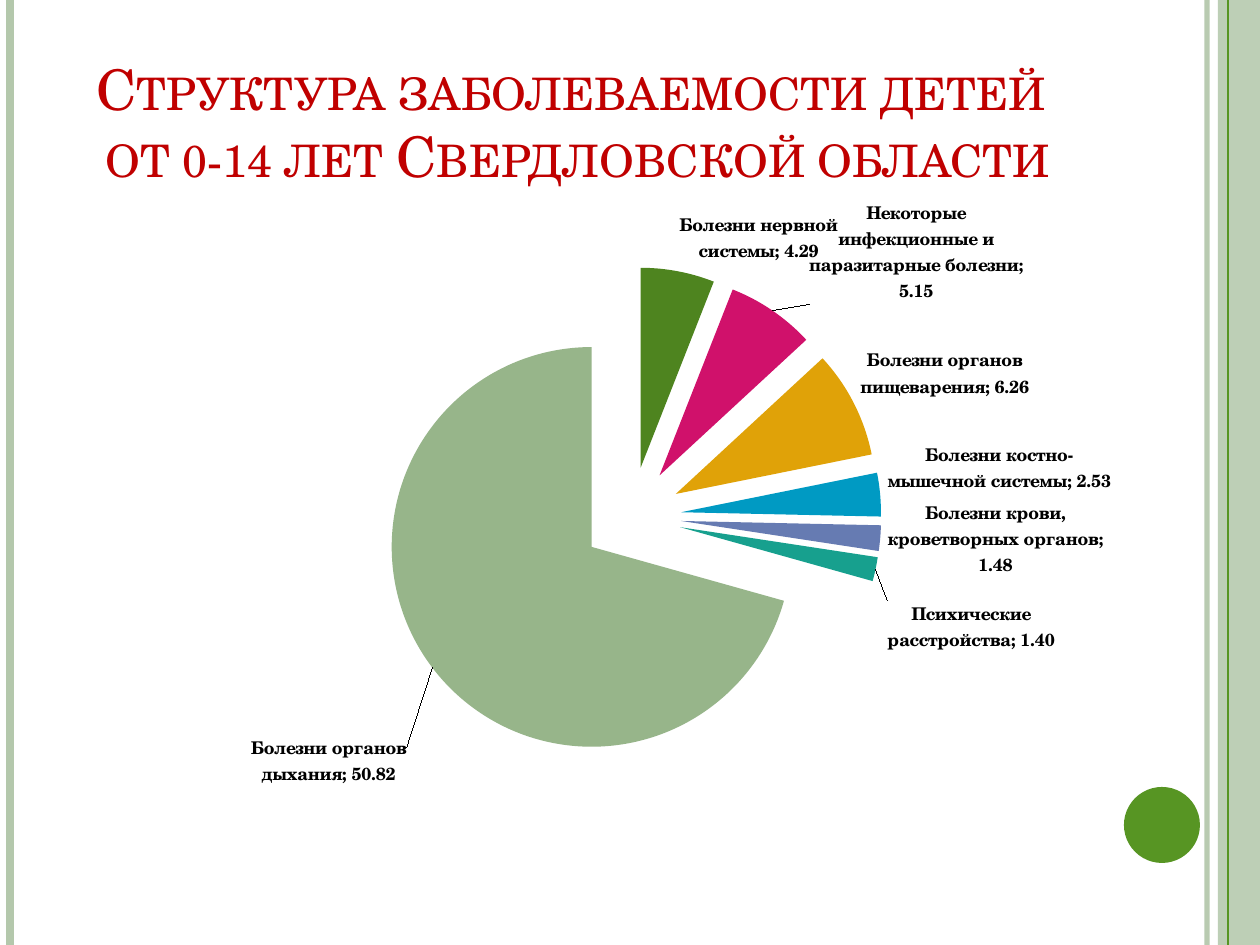
import pptx
import pptx.util
import pptx.chart.data
import pptx.dml.color
import pptx.enum.chart
import pptx.enum.shapes
import pptx.enum.text
import pptx.oxml
import pptx.oxml.ns

SCALE = 914400 // 126  # EMU per px

THEME = {
    "face": "TeX Gyre Schola",
    "title": 32,
    "label": 10,
    "red": "C00000",
    "black": "000000",
    "sage": "B4C8AC",
    "green": "579523",
}

# Category, value, slice colour, label shift in px
SLICES = [
    ("Болезни нервной системы", 4.29, "4E841F", None),
    ("Некоторые инфекционные и паразитарные болезни", 5.15, "D0116B", (32, 0)),
    ("Болезни органов пищеварения", 6.26, "E0A208", None),
    ("Болезни костно-мышечной системы", 2.53, "009AC3", None),
    ("Болезни крови, кроветворных органов", 1.48, "667BB2", None),
    ("Психические расстройства", 1.4, "17A08E", (5, 30)),
    ("Болезни органов дыхания", 50.82, "97B58A", (-20, 75)),
]
CHART = (69, 161, 1162, 626)
PLOT = (381, 267, 500, 500)


def px(num):
    return pptx.util.Emu(num * SCALE)


def tint(name):
    return pptx.dml.color.RGBColor.from_string(THEME.get(name, name))


def style(item, form):
    for key, val in form.items():
        setattr(item, key, val)


def fade(fill, alpha):
    """Set the opacity, in percent, of a solid fill."""
    for node in fill.iter(pptx.oxml.ns.qn("a:srgbClr")):
        pptx.oxml.ns.qn("a:alpha")
        node.append(pptx.oxml.parse_xml(
            f'<a:alpha {pptx.oxml.ns.nsdecls("a")} val="{alpha * 1000}"/>'))


def add_rule(slide, left, width, name, alpha=100):
    """Draw a line over the full height of the slide."""
    kind = pptx.enum.shapes.MSO_CONNECTOR.STRAIGHT
    rule = slide.shapes.add_connector(kind, px(left), 0, px(left), px(945))
    rule.line.width = pptx.util.Pt(width)
    rule.line.color.rgb = tint(name)
    props = rule.line._get_or_add_ln().getparent()
    if alpha < 100:
        fade(props, alpha)
    props.append(pptx.oxml.parse_xml(
        f'<a:effectLst {pptx.oxml.ns.nsdecls("a")}/>'))


def add_form(slide, kind, box, name, alpha=100):
    form = slide.shapes.add_shape(kind, *map(px, box))
    form.shadow.inherit = False
    form.fill.solid()
    form.fill.fore_color.rgb = tint(name)
    form.line.fill.background()
    if alpha < 100:
        fade(form._element.spPr, alpha)


def add_title(slide, box, lines):
    frame = slide.shapes.add_textbox(*map(px, box)).text_frame
    style(frame, {"word_wrap": True,
                  "vertical_anchor": pptx.enum.text.MSO_ANCHOR.BOTTOM})
    para = frame.paragraphs[0]
    para.alignment = pptx.enum.text.PP_ALIGN.CENTER
    for num, line in enumerate(lines):
        if num:
            para.add_line_break()
        run = para.add_run()
        run.text = line
        style(run.font, {"name": THEME["face"],
                         "size": pptx.util.Pt(THEME["title"])})
        run.font.color.rgb = tint("red")
        run._r.get_or_add_rPr().set("cap", "small")


def layout(x, y, size=None):
    """Manual layout: a label shift, or a plot box when a size is given."""
    parts = {"x": x, "y": y}
    if size:
        parts = {"layoutTarget": "inner", "xMode": "edge", "yMode": "edge",
                 **parts, "w": size[0], "h": size[1]}
    body = "".join(
        f'<c:{key} val="{val if isinstance(val, str) else round(val, 3)}"/>'
        for key, val in parts.items())
    return pptx.oxml.parse_xml(
        f'<c:layout {pptx.oxml.ns.nsdecls("c")}>'
        f'<c:manualLayout>{body}</c:manualLayout></c:layout>')


def add_shift(label, shift):
    """Move one label, keeping category and value in it."""
    label.position = pptx.enum.chart.XL_LABEL_POSITION.OUTSIDE_END
    node = label._dLbl
    node.find(pptx.oxml.ns.qn("c:showCatName")).set("val", "1")
    node.find(pptx.oxml.ns.qn("c:idx")).addnext(
        layout(shift[0] / CHART[2], shift[1] / CHART[3]))
    add_break(node)


def add_break(node):
    node.find(pptx.oxml.ns.qn("c:showBubbleSize")).addnext(
        pptx.oxml.parse_xml(
            f'<c:separator {pptx.oxml.ns.nsdecls("c")}>; </c:separator>'))


def add_pie(slide):
    data = pptx.chart.data.CategoryChartData(number_format="0.00")
    data.categories = [item[0] for item in SLICES]
    data.add_series("Series 1", [item[1] for item in SLICES])
    chart = slide.shapes.add_chart(
        pptx.enum.chart.XL_CHART_TYPE.PIE_EXPLODED,
        *map(px, CHART), data).chart
    style(chart, {"has_legend": False, "has_title": False})
    font = {"name": THEME["face"], "size": pptx.util.Pt(THEME["label"]),
            "bold": True}
    style(chart.font, font)
    chart.font.color.rgb = tint("black")

    # Place of the pie
    area = chart._chartSpace.chart.plotArea
    for old in area.findall(pptx.oxml.ns.qn("c:layout")):
        area.remove(old)
    left, top, wide, high = PLOT
    area.insert(0, layout((left - CHART[0]) / CHART[2],
                          (top - CHART[1]) / CHART[3],
                          (wide / CHART[2], high / CHART[3])))

    # Labels
    plot = chart.plots[0]
    plot.vary_by_categories = True
    series = plot.series[0]
    labels = series.data_labels
    style(labels, {
        "show_value": True, "show_category_name": True,
        "number_format": "0.00", "number_format_is_linked": False,
        "position": pptx.enum.chart.XL_LABEL_POSITION.OUTSIDE_END})
    style(labels.font, font)
    labels.font.color.rgb = tint("black")
    add_break(labels._element)
    lead = labels._element.find(pptx.oxml.ns.qn("c:showLeaderLines"))
    if lead is not None:
        lead.set("val", "1")

    # Slices
    for old in series._element.findall(pptx.oxml.ns.qn("c:explosion")):
        old.set("val", "25")
    for num, (_, _, name, shift) in enumerate(SLICES):
        point = series.points[num]
        point.format.fill.solid()
        point.format.fill.fore_color.rgb = tint(name)
        if shift:
            add_shift(point.data_label, shift)


def main():
    deck = pptx.Presentation()
    style(deck, {"slide_width": px(1260), "slide_height": px(945)})
    slide = deck.slides.add_slide(deck.slide_layouts[6])
    kinds = pptx.enum.shapes.MSO_SHAPE

    # Side bands
    add_rule(slide, 1207, 3, "sage", 93)
    add_rule(slide, 10, 4.5, "sage")
    add_rule(slide, 1228, 1.5, "green")
    add_form(slide, kinds.RECTANGLE, (1218, 0, 42, 945), "sage", 87)
    add_rule(slide, 1228, 0.75, "green")
    add_form(slide, kinds.OVAL, (1124, 787, 76, 76), "green")

    # Content
    add_title(slide, (63, 38, 1029, 157),
              ["Структура заболеваемости детей ",
               "от 0-14 лет Свердловской области"])
    add_pie(slide)
    deck.save("out.pptx")


if __name__ == "__main__":
    main()
